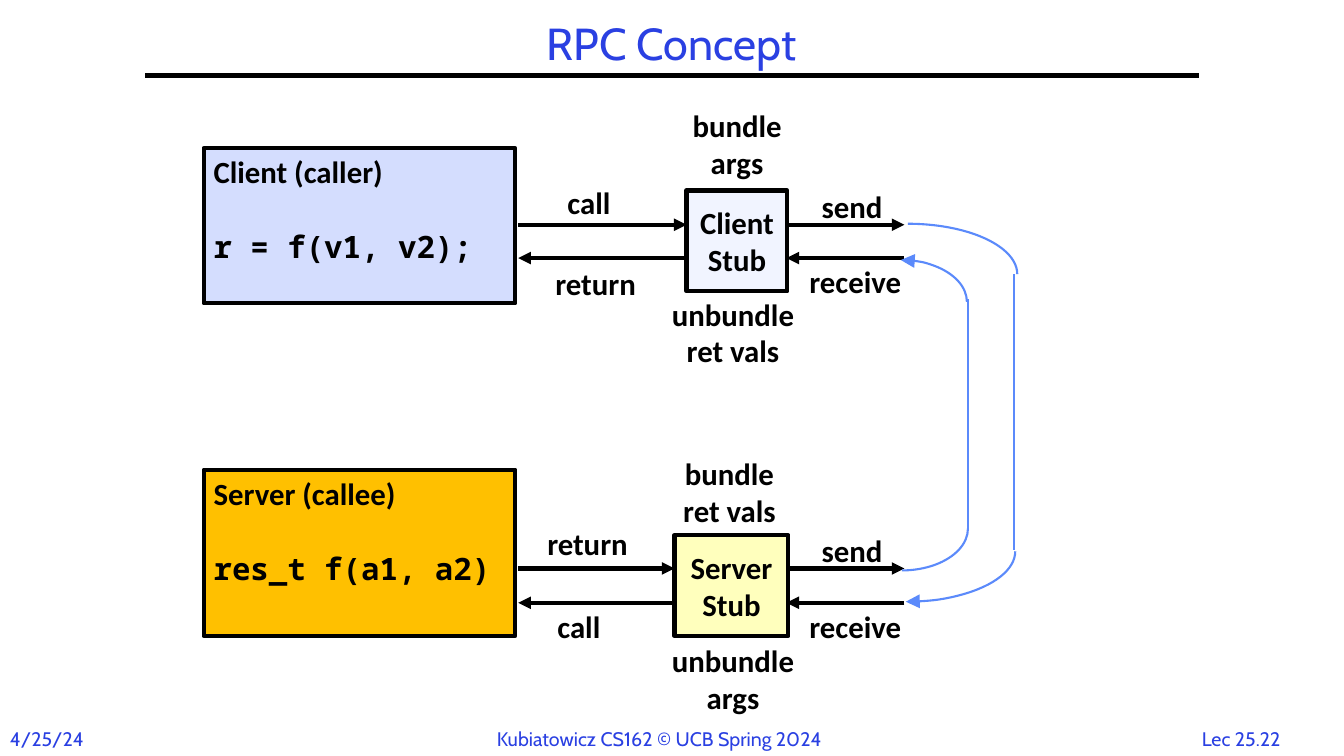
from lxml.etree import SubElement
from pptx import Presentation
from pptx.dml.color import RGBColor
from pptx.enum.shapes import MSO_CONNECTOR, MSO_SHAPE
from pptx.enum.text import MSO_ANCHOR, MSO_AUTO_SIZE, PP_ALIGN
from pptx.oxml.ns import qn
from pptx.util import Inches, Pt

BLACK, TITLE_BLUE, NETWORK_BLUE = "000000", "2A40E2", "5B8AFB"
LEFT, CENTER = PP_ALIGN.LEFT, PP_ALIGN.CENTER

presentation = Presentation()
presentation.slide_width, presentation.slide_height = Inches(13.33), Inches(7.5)
slide = presentation.slides.add_slide(presentation.slide_layouts[6])


def write(shape, lines, align=CENTER, size=22, font="Calibri", color=BLACK, bold=True):
    """Fill a shape with one paragraph per line, without wrapping."""
    frame = shape.text_frame
    frame.word_wrap = False
    for index, line in enumerate(lines):
        paragraph = frame.paragraphs[0] if index == 0 else frame.add_paragraph()
        paragraph.alignment = align
        run = paragraph.add_run()
        run.text = line
        run.font.size, run.font.name, run.font.bold = Pt(size), font, bold
        run.font.color.rgb = RGBColor.from_string(color)
    return frame


def style_line(shape, color, width, arrow=None, arrow_size="med"):
    """Set an outline; arrow is headEnd, tailEnd or None."""
    shape.line.color.rgb = RGBColor.from_string(color)
    shape.line.width = Pt(width)
    properties = shape._element.spPr
    if arrow:
        SubElement(properties.find(qn("a:ln")), qn("a:" + arrow),
                   type="triangle", w=arrow_size, len=arrow_size)
    SubElement(properties, qn("a:effectLst"))


# Shared columns, and the outgoing and incoming row of each side
box_left, box_width = 2.02, 3.09
box_edge, stub_center, stub_right, network_left = 5.14, 7.06, 7.8, 8.97
client_out, client_in = 2.23, 2.56
server_out, server_in = 5.64, 5.98

# Title and footer
title = slide.shapes.add_textbox(Inches(1.44), Inches(0.17), Inches(10.44), Inches(0.58))
title_frame = write(title, ["RPC Concept"], CENTER, 32, "Cabin", TITLE_BLUE, False)
title_frame.word_wrap = True
title_frame.vertical_anchor = MSO_ANCHOR.MIDDLE
title_frame.paragraphs[0].line_spacing = 0.9

for text, left, width, align in [
    ("4/25/24", 0, 1.2, LEFT),
    ("Kubiatowicz CS162 © UCB Spring 2024", 4.83, 3.68, LEFT),
    ("Lec 25.22", 11.77, 1.08, CENTER),
]:
    footer = slide.shapes.add_textbox(Inches(left), Inches(7.16), Inches(width), Inches(0.34))
    write(footer, [text], align, 14, "Cabin", TITLE_BLUE, False)

# Straight lines: the title rule, the call arrows, the network links
for x1, y1, x2, y2, color, width, arrow in [
    (1.44, 0.75, 11.89, 0.75, BLACK, 3, None),
    (box_edge, client_out, 6.81, client_out, BLACK, 3, "tailEnd"),
    (stub_center, client_in, box_edge, client_in, BLACK, 3, "tailEnd"),
    (box_edge, server_out, 6.69, server_out, BLACK, 3, "tailEnd"),
    (stub_center, server_in, box_edge, server_in, BLACK, 3, "tailEnd"),
    (stub_right, client_out, network_left, client_out, BLACK, 3, "tailEnd"),
    (network_left, client_in, stub_right, client_in, BLACK, 3, "tailEnd"),
    (stub_right, server_out, network_left, server_out, BLACK, 3, "tailEnd"),
    (network_left, server_in, stub_right, server_in, BLACK, 3, "tailEnd"),
    (10.06, 2.72, 10.06, 5.46, NETWORK_BLUE, 1.5, None),
    (9.6, 5.25, 9.6, 2.97, NETWORK_BLUE, 1.5, None),
]:
    connector = slide.shapes.add_connector(
        MSO_CONNECTOR.STRAIGHT, Inches(x1), Inches(y1), Inches(x2), Inches(y2))
    style_line(connector, color, width, arrow)

# Program boxes and stubs
for lines, left, top, width, height, fill in [
    (["Client (caller)", "r = f(v1, v2);"], box_left, 1.47, box_width, 1.54, "D4DDFE"),
    (["Server (callee)", "res_t f(a1, a2)"], box_left, 4.66, box_width, 1.65, "FFC000"),
    (["Client", "Stub"], 6.81, 1.89, 1, 1, "F1F4FF"),
    (["Server", "Stub"], 6.69, 5.31, 1.13, 1, "FFFFBD"),
]:
    box = slide.shapes.add_shape(
        MSO_SHAPE.RECTANGLE, Inches(left), Inches(top), Inches(width), Inches(height))
    box.fill.solid()
    box.fill.fore_color.rgb = RGBColor.from_string(fill)
    style_line(box, BLACK, 3)
    is_program = left == box_left
    frame = write(box, lines, LEFT if is_program else CENTER)
    frame.vertical_anchor = MSO_ANCHOR.TOP if is_program else MSO_ANCHOR.MIDDLE
    if is_program:
        code = frame.paragraphs[1]
        code.space_before = Pt(27)
        code.runs[0].font.name = "Noto Sans Mono"

# Labels around arrows and stubs
for lines, left, top, width in [
    (["call"], 5.53, 1.77, 0.68),
    (["return"], 5.41, 2.58, 1.13),
    (["return"], 5.33, 5.16, 1.13),
    (["call"], 5.43, 5.98, 0.69),
    (["send"], 8.05, 1.81, 0.86),
    (["receive"], 7.93, 2.56, 1.23),
    (["send"], 8.05, 5.23, 0.86),
    (["receive"], 7.93, 5.98, 1.23),
    (["bundle", "args"], 6.72, 1.01, 1.18),
    (["unbundle", "ret vals"], 6.5, 2.88, 1.54),
    (["bundle", "ret vals"], 6.61, 4.46, 1.25),
    (["unbundle", "args"], 6.5, 6.32, 1.54),
]:
    height = 0.1 + 0.37 * len(lines)
    label = slide.shapes.add_textbox(Inches(left), Inches(top), Inches(width), Inches(height))
    frame = write(label, lines, LEFT if len(lines) == 1 else CENTER)
    frame.auto_size = MSO_AUTO_SIZE.SHAPE_TO_FIT_TEXT

# Rounded ends of the network links
for left, top, width, height, flipped, arrow in [
    (7.92, 2.22, 2.17, 1, False, None),
    (7.9, 4.97, 2.17, 1, True, "headEnd"),
    (8.29, 4.83, 1.31, 0.83, True, None),
    (8.28, 2.58, 1.31, 0.83, False, "headEnd"),
]:
    arc = slide.shapes.add_shape(
        MSO_SHAPE.ARC, Inches(left), Inches(top), Inches(width), Inches(height))
    arc.fill.background()
    style_line(arc, NETWORK_BLUE, 1.5, arrow, "lg")
    if flipped:
        arc._element.spPr.find(qn("a:xfrm")).set("flipV", "1")

presentation.save("out.pptx")
